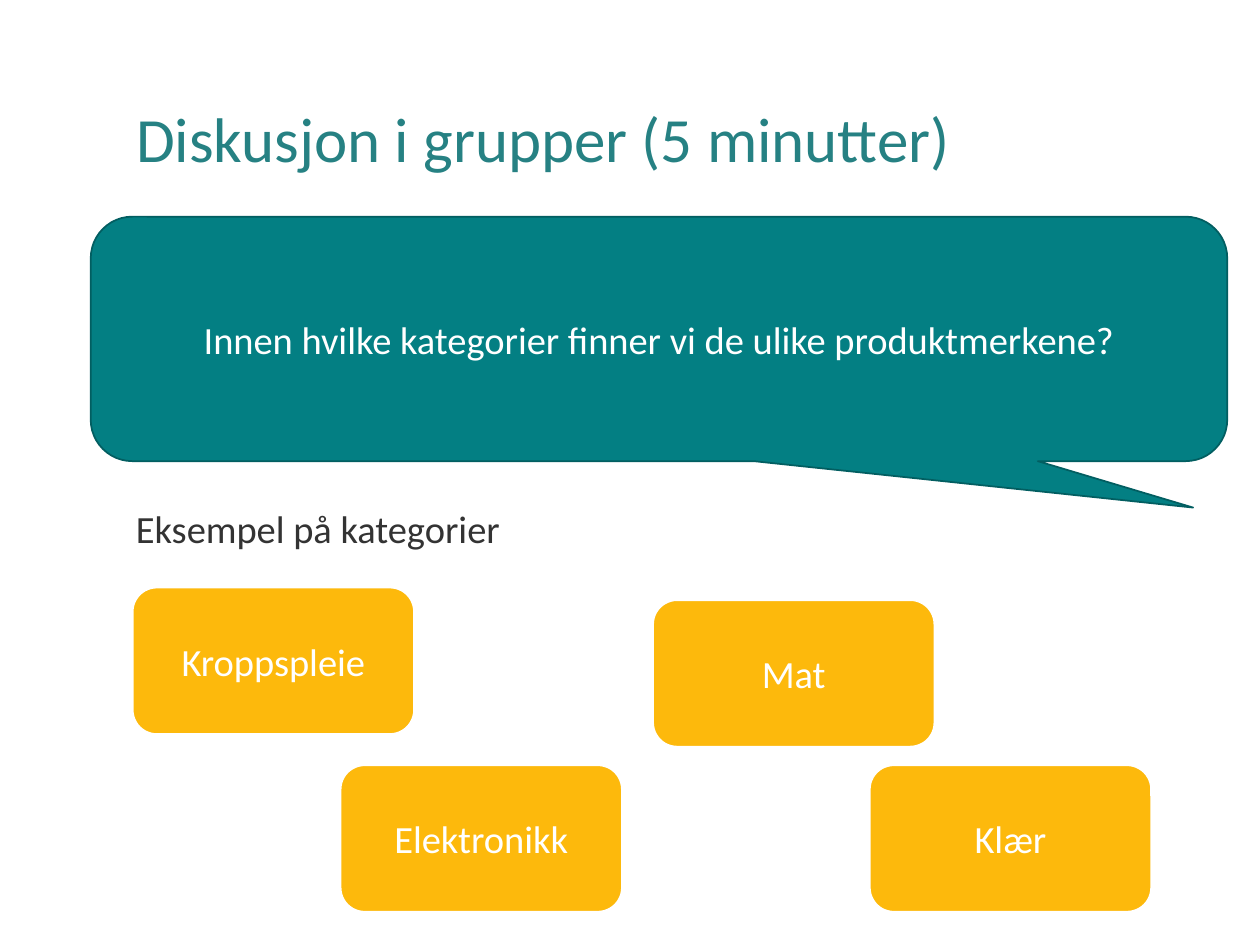
from pptx import Presentation
from pptx.dml.color import RGBColor
from pptx.enum import shapes, text
from pptx.util import Inches, Pt

# Content
TITLE = "Diskusjon i grupper (5 minutter)"
QUESTION = "Innen hvilke kategorier finner vi de ulike produktmerkene?"
INTRO = "Eksempel på kategorier"
CATEGORIES = [  # label, left, top
    ("Kroppspleie", 1.05, 4.66),
    ("Elektronikk", 2.7, 6.07),
    ("Mat", 5.18, 4.76),
    ("Klær", 6.9, 6.07),
]
CATEGORY_SIZE = (2.24, 1.17)

THEME = {
    "font": "Calibri",
    "title_size": 36,
    "body_size": 22,
    "title": "268183",
    "body": "333333",
    "callout": "037F83",
    "callout_line": "025E61",
    "category": "FDB90C",
    "white": "FFFFFF",
}


def color(name):
    return RGBColor.from_string(THEME[name])


def write(shape, words, size, color_name, align, anchor):
    frame = shape.text_frame
    frame.word_wrap = True
    frame.vertical_anchor = anchor
    frame.text = words
    paragraph = frame.paragraphs[0]
    paragraph.alignment = align
    paragraph.font.name = THEME["font"]
    paragraph.font.size = Pt(THEME[size])
    paragraph.font.color.rgb = color(color_name)
    return paragraph


def add_panel(slide, kind, box, words, fill, line, line_width):
    shape = slide.shapes.add_shape(kind, *map(Inches, box))
    shape.shadow.inherit = False
    shape.fill.solid()
    shape.fill.fore_color.rgb = color(fill)
    shape.line.color.rgb = color(line)
    shape.line.width = Pt(line_width)
    write(shape, words, "body_size", "white",
          text.PP_ALIGN.CENTER, text.MSO_ANCHOR.MIDDLE)
    return shape


def main():
    presentation = Presentation()
    presentation.slide_width, presentation.slide_height = Inches(10), Inches(7.5)
    slide = presentation.slides.add_slide(presentation.slide_layouts[5])

    # Title
    title = slide.shapes.title
    title.left, title.top, title.width, title.height = map(
        Inches, (0.98, 0.4, 8.29, 1.45))
    write(title, TITLE, "title_size", "title", text.PP_ALIGN.LEFT,
          text.MSO_ANCHOR.MIDDLE).line_spacing = 0.9

    # Introduction to the categories
    intro = slide.shapes.add_textbox(*map(Inches, (0.98, 4, 8.29, 2.57)))
    write(intro, INTRO, "body_size", "body", text.PP_ALIGN.LEFT,
          text.MSO_ANCHOR.TOP).line_spacing = 0.9

    # Question in a speech bubble
    callout = add_panel(
        slide, shapes.MSO_SHAPE.ROUNDED_RECTANGULAR_CALLOUT,
        (0.72, 1.72, 9.02, 1.94), QUESTION, "callout", "callout_line", 1)
    for index, value in enumerate((0.47, 0.69, 0.17)):
        callout.adjustments[index] = value

    # Category cards
    for label, left, top in CATEGORIES:
        add_panel(slide, shapes.MSO_SHAPE.ROUNDED_RECTANGLE,
                  (left, top, *CATEGORY_SIZE), label, "category", "white", 1.5)

    presentation.save("out.pptx")


if __name__ == "__main__":
    main()
